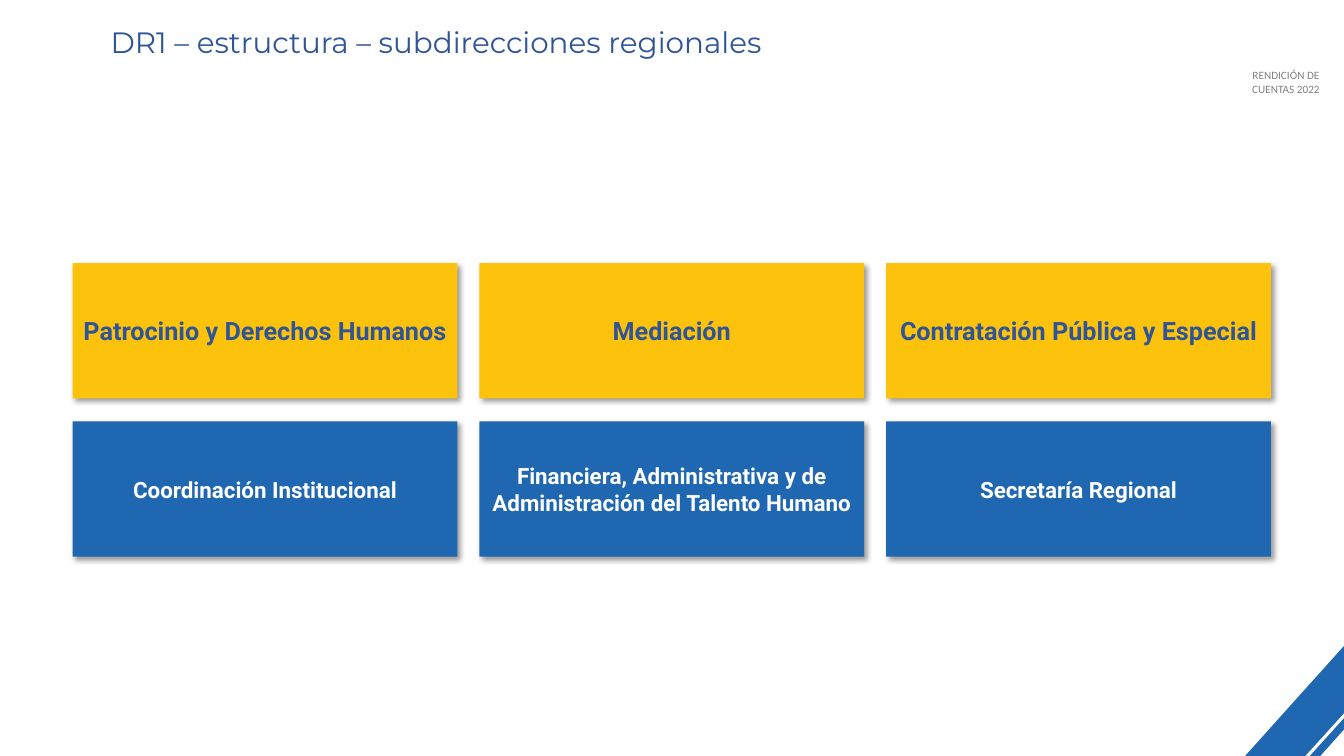
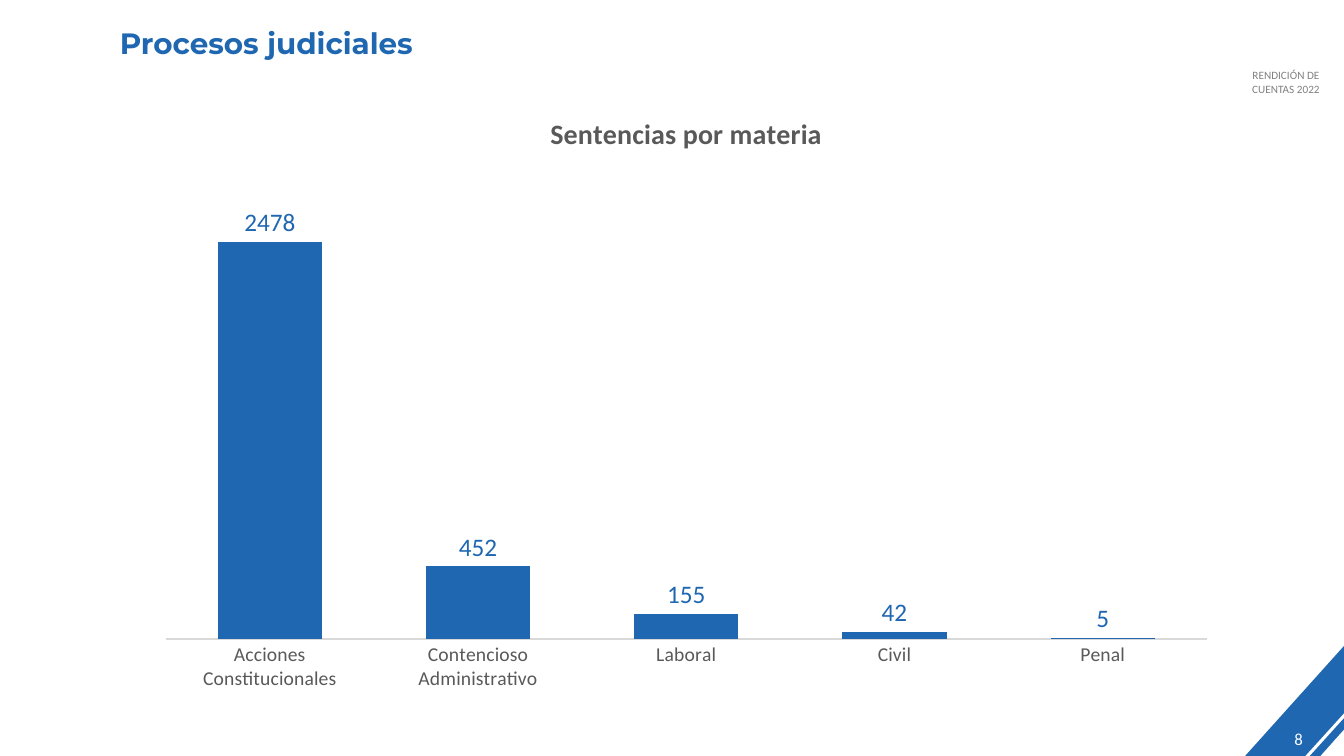
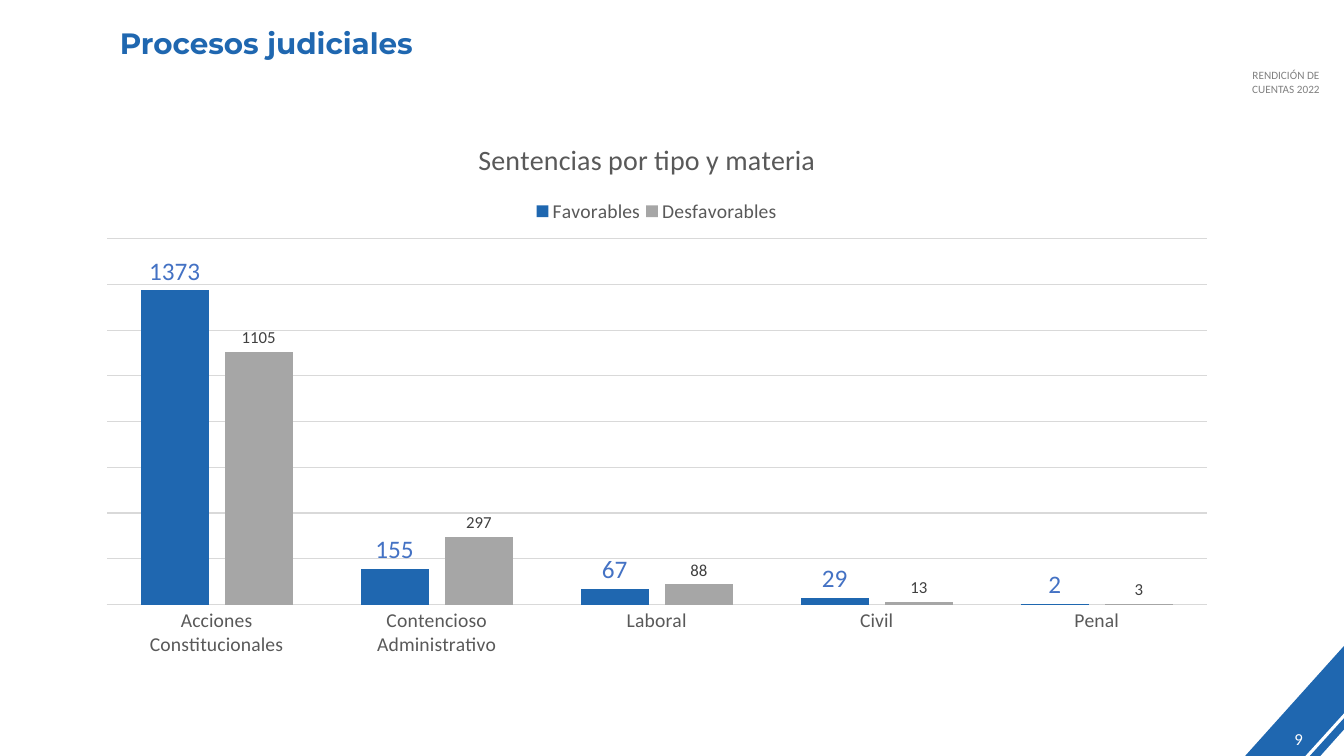
from collections import namedtuple
from dataclasses import dataclass

from pptx import Presentation
from pptx.chart.data import CategoryChartData
from pptx.dml.color import RGBColor
from pptx.enum.chart import XL_CHART_TYPE as ChartType, XL_LABEL_POSITION as LabelPos
from pptx.enum.chart import XL_LEGEND_POSITION as LegendPos, XL_TICK_MARK as Tick
from pptx.enum.shapes import MSO_SHAPE as Preset
from pptx.enum.text import MSO_ANCHOR as Anchor, PP_ALIGN as Align
from pptx.oxml import parse_xml
from pptx.oxml.ns import nsdecls, qn
from pptx.util import Cm, Pt

Box = namedtuple("Box", "left top width height")
Series = namedtuple("Series", "name values fill label_color label_size")


@dataclass(frozen=True)
class Theme:
    blue: str = "1F67B0"
    navy: str = "2F5597"
    sky: str = "4472C4"
    yellow: str = "FDC20B"
    white: str = "FFFFFF"
    silver: str = "A6A6A6"
    gray: str = "808080"
    ink: str = "595959"
    dark: str = "404040"
    rule: str = "D9D9D9"
    title_font: str = "Montserrat"
    card_font: str = "Roboto"
    body_font: str = "Calibri"
    title: int = 21
    chart_title: int = 20
    large: int = 18
    medium: int = 16
    axis: int = 14
    small: int = 12
    tag: int = 8


THEME = Theme()
PAGE = Box(0, 0, 33.87, 19.05)
MATTERS = ["Acciones Constitucionales", "Contencioso Administrativo", "Laboral", "Civil", "Penal"]


def cm(box):
    return [Cm(length) for length in box]


def color(code):
    return RGBColor.from_string(code)


def style(font, size, tint, face=THEME.body_font, bold=False):
    font.name, font.size, font.bold = face, Pt(size), bold
    font.color.rgb = color(tint)


def write(frame, text, size, tint, face=THEME.body_font, bold=False,
          align=Align.LEFT, anchor=Anchor.TOP, inset=0.25):
    frame.word_wrap = True
    frame.vertical_anchor = anchor
    frame.margin_left = frame.margin_right = Cm(inset)
    for index, line in enumerate(text.split("\n")):
        paragraph = frame.add_paragraph() if index else frame.paragraphs[0]
        paragraph.alignment = align
        run = paragraph.add_run()
        run.text = line
        style(run.font, size, tint, face, bold)


def label(slide, box, text, size, tint, **fmt):
    write(slide.shapes.add_textbox(*cm(box)).text_frame, text, size, tint, **fmt)


def block(slide, preset, box, fill):
    shape = slide.shapes.add_shape(preset, *cm(box))
    shape.shadow.inherit = False
    shape.fill.solid()
    shape.fill.fore_color.rgb = color(fill)
    shape.line.fill.background()
    return shape


def corner(slide, page):
    stripes = [(2.49, 2.77, THEME.blue), (0.97, 1.07, THEME.white),
               (0.86, 0.95, THEME.blue), (0.59, 0.66, THEME.white)]
    for width, height, fill in stripes:
        box = Box(page.left + page.width - width, page.top + page.height - height, width, height)
        stripe = block(slide, Preset.RIGHT_TRIANGLE, box, fill)
        stripe._element.spPr.find(qn("a:xfrm")).set("flipH", "1")


def base_slide(deck, title, title_box, number=None, **fmt):
    slide = deck.slides.add_slide(deck.slide_layouts[6])
    corner(slide, PAGE)
    label(slide, Box(30.96, 1.6, 2.9, 0.94), "RENDICIÓN DE\nCUENTAS 2022",
          THEME.tag, THEME.gray, align=Align.CENTER)
    if number:
        label(slide, Box(32.03, 18.19, 1.4, 0.86), number, THEME.small, THEME.white,
              align=Align.CENTER, anchor=Anchor.MIDDLE)
    label(slide, title_box, title, THEME.title, face=THEME.title_font, **fmt)
    return slide


def cast_shadow(shape):
    effects = shape._element.spPr.find(qn("a:effectLst"))
    effects.append(parse_xml(
        f'<a:outerShdw {nsdecls("a")} blurRad="{Pt(4)}" dist="{Pt(3)}" dir="2700000" '
        'algn="tl" rotWithShape="0"><a:srgbClr val="000000"><a:alpha val="40000"/>'
        '</a:srgbClr></a:outerShdw>'))


def card_grid(slide, box, rows, gap_x=0.55, gap_y=0.58):
    height = (box.height - gap_y * (len(rows) - 1)) / len(rows)
    for row, (names, fill, tint, size) in enumerate(rows):
        width = (box.width - gap_x * (len(names) - 1)) / len(names)
        for column, name in enumerate(names):
            place = Box(box.left + column * (width + gap_x),
                        box.top + row * (height + gap_y), width, height)
            card = block(slide, Preset.RECTANGLE, place, fill)
            cast_shadow(card)
            write(card.text_frame, name, size, tint, face=THEME.card_font, bold=True,
                  align=Align.CENTER, anchor=Anchor.MIDDLE, inset=0.2)


def set_layout(part, index, inner=False, **fractions):
    for old in part.findall(qn("c:layout")):
        part.remove(old)
    target = '<c:layoutTarget val="inner"/>' if inner else ""
    modes = "".join(f'<c:{axis}Mode val="edge"/>' for axis in "xy")
    values = "".join(f'<c:{key} val="{value}"/>' for key, value in fractions.items())
    part.insert(index, parse_xml(
        f'<c:layout {nsdecls("c")}><c:manualLayout>{target}{modes}{values}'
        '</c:manualLayout></c:layout>'))


def column_chart(slide, box, title, series_list, maximum, step, plot_at, title_at,
                 bold_title=False, legend_at=None, grid=False):
    data = CategoryChartData()
    data.categories = MATTERS
    for series in series_list:
        data.add_series(series.name, series.values)
    chart = slide.shapes.add_chart(ChartType.COLUMN_CLUSTERED, *cm(box), data).chart
    style(chart.font, THEME.axis, THEME.ink)

    chart.has_title = True
    write_title = chart.chart_title.text_frame.paragraphs[0].add_run()
    write_title.text = title
    style(write_title.font, THEME.chart_title, THEME.ink, bold=bold_title)
    set_layout(chart.chart_title._element, 1, **title_at)

    chart.has_legend = bool(legend_at)
    if legend_at:
        chart.legend.position = LegendPos.TOP
        chart.legend.include_in_layout = False
        style(chart.legend.font, THEME.axis, THEME.ink)
        set_layout(chart.legend._element, 1, **legend_at)

    matters = chart.category_axis
    matters.major_tick_mark = Tick.NONE
    style(matters.tick_labels.font, THEME.axis, THEME.ink)
    matters.format.line.color.rgb = color(THEME.rule)
    matters.format.line.width = Pt(1)

    counts = chart.value_axis
    counts.minimum_scale, counts.maximum_scale, counts.major_unit = 0, maximum, step
    counts.has_major_gridlines = grid
    if grid:
        counts.major_gridlines.format.line.color.rgb = color(THEME.rule)
        counts.major_gridlines.format.line.width = Pt(0.75)
    counts.visible = False

    columns = chart.plots[0]
    columns.gap_width, columns.overlap, columns.vary_by_categories = 100, -24, False
    for drawn, series in zip(columns.series, series_list):
        drawn.format.fill.solid()
        drawn.format.fill.fore_color.rgb = color(series.fill)
        drawn.invert_if_negative = False
        drawn.data_labels.show_value = True
        drawn.data_labels.position = LabelPos.OUTSIDE_END
        style(drawn.data_labels.font, series.label_size, series.label_color)
    set_layout(chart._chartSpace.find(".//" + qn("c:plotArea")), 0, inner=True, **plot_at)


def structure_slide(deck):
    slide = base_slide(deck, "DR1 – estructura – subdirecciones regionales",
                       Box(2.54, 0.48, 20.2, 1.14), tint=THEME.navy)
    card_grid(slide, Box(1.83, 6.63, 30.2, 7.4), [
        (["Patrocinio y Derechos Humanos", "Mediación", "Contratación Pública y Especial"],
         THEME.yellow, THEME.navy, THEME.large),
        (["Coordinación Institucional",
          "Financiera, Administrativa y de Administración del Talento Humano",
          "Secretaría Regional"],
         THEME.blue, THEME.white, THEME.medium),
    ])


def rulings_slide(deck, number, box, title, series_list, **chart_format):
    slide = base_slide(deck, "Procesos judiciales", Box(2.77, 0.51, 13.8, 1.14), number,
                       tint=THEME.blue, bold=True)
    column_chart(slide, box, title, series_list, **chart_format)


def main():
    deck = Presentation()
    deck.slide_width, deck.slide_height = Cm(PAGE.width), Cm(PAGE.height)
    structure_slide(deck)
    rulings_slide(
        deck, "8", Box(3.63, 2.11, 27.33, 15.72), "Sentencias por materia",
        [Series("Sentencias", [2478, 452, 155, 42, 5], THEME.blue, THEME.blue, THEME.large)],
        maximum=3000, step=500, bold_title=True,
        title_at=dict(x=0.37, y=0.04), plot_at=dict(x=0.02, y=0.12, w=0.96, h=0.77))
    rulings_slide(
        deck, "9", Box(2.11, 3.12, 28.88, 13.77), "Sentencias por tipo y materia",
        [Series("Favorables", [1373, 155, 67, 29, 2], THEME.blue, THEME.sky, THEME.large),
         Series("Desfavorables", [1105, 297, 88, 13, 3], THEME.silver, THEME.dark, THEME.small)],
        maximum=1600, step=200, grid=True,
        title_at=dict(x=0.34, y=0.02), plot_at=dict(x=0.02, y=0.21, w=0.96, h=0.67),
        legend_at=dict(x=0.39, y=0.13, w=0.22, h=0.06))
    deck.save("out.pptx")


if __name__ == "__main__":
    main()
